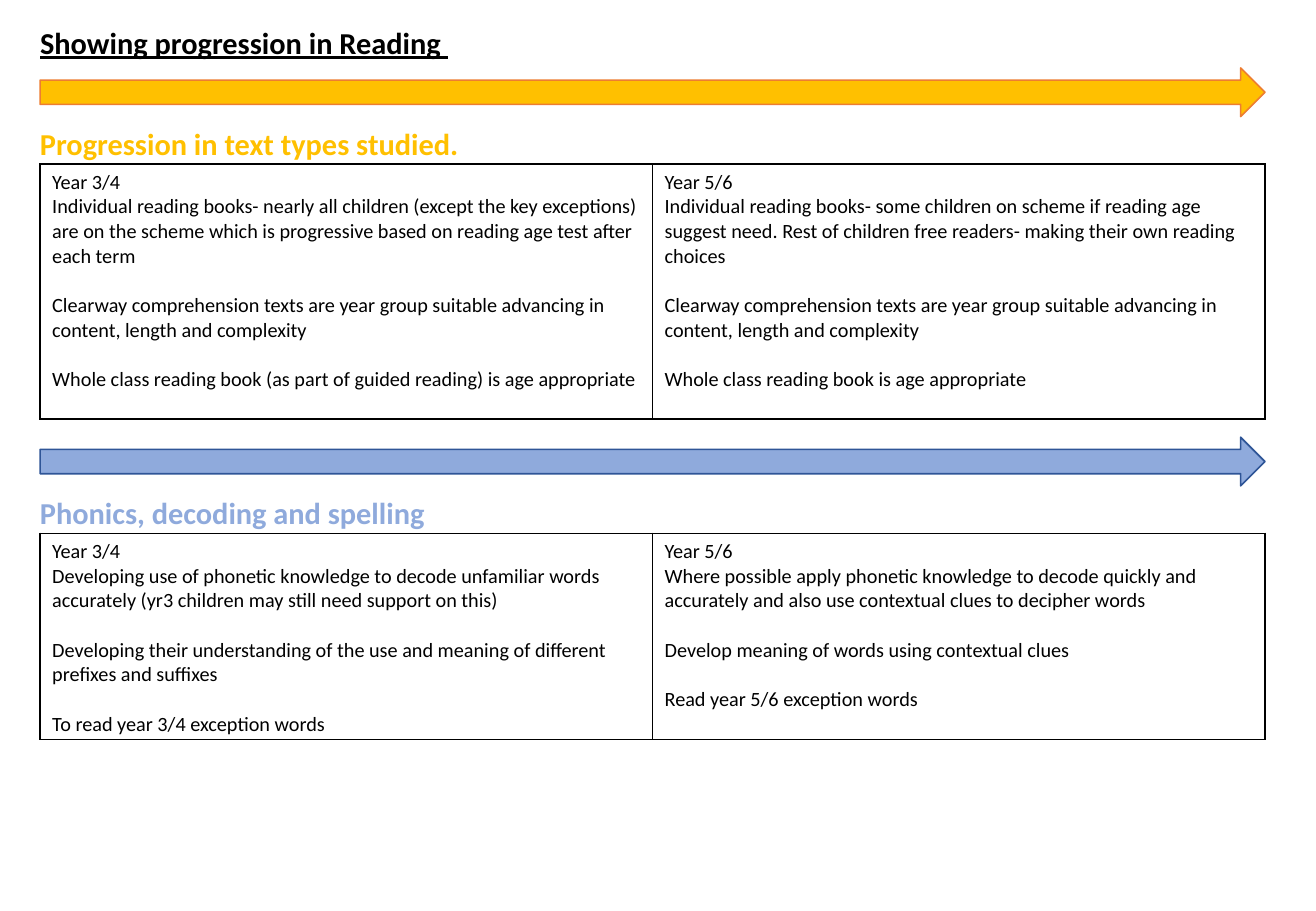
from lxml import etree
from pptx import Presentation, util as u
from pptx.dml.color import RGBColor
from pptx.enum import shapes, text
from pptx.oxml.ns import qn

LEFT, WIDTH = 0.33, 10.08
TEXT_LEFT = 0.23
BLACK, AMBER, BLUE = "000000", "FFC000", "8FAADC"
COMPREHENSION = ("Clearway comprehension texts are year group suitable advancing in "
                 "content, length and complexity")

# Each cell holds a year group and its blocks; blocks are set apart by a gap.
SECTIONS = [
    dict(top=0.56, height=2.1, color=AMBER, outline="ED7D31",
         heading="Progression in text types studied.",
         cells=[
             ("Year 3/4", [
                 "Individual reading books- nearly all children (except the key exceptions) "
                 "are on the scheme which is progressive based on reading age test after "
                 "each term",
                 COMPREHENSION,
                 "Whole class reading book (as part of guided reading) is age appropriate"]),
             ("Year 5/6", [
                 "Individual reading books- some children on scheme if reading age suggest "
                 "need. Rest of children free readers- making their own reading choices",
                 COMPREHENSION,
                 "Whole class reading book is age appropriate"])]),
    dict(top=3.6, height=1.7, color=BLUE, outline="2F5597",
         heading="Phonics, decoding and spelling",
         cells=[
             ("Year 3/4", [
                 "Developing use of phonetic knowledge to decode unfamiliar words "
                 "accurately (yr3 children may still need support on this)",
                 "Developing their understanding of the use and meaning of different "
                 "prefixes and suffixes",
                 "To read year 3/4 exception words"]),
             ("Year 5/6", [
                 "Where possible apply phonetic knowledge to decode quickly and accurately "
                 "and also use contextual clues to decipher words",
                 "Develop meaning of words using contextual clues",
                 "Read year 5/6 exception words"])]),
]


def rgb(color):
    return RGBColor.from_string(color)


class ProgressionSlide:
    font = "Calibri"
    heading_size, body_size = 18, 12
    block_gap = 14.65

    def __init__(self, presentation):
        self.slide = presentation.slides.add_slide(presentation.slide_layouts[5])

    def run(self, paragraph, wording, size, color=BLACK, bold=False, underline=False):
        run = paragraph.add_run()
        run.text = wording
        font = run.font
        font.name, font.size, font.bold = self.font, u.Pt(size), bold
        font.underline = underline
        font.color.rgb = rgb(color)

    def heading_text(self, shape, wording, color, underline=False):
        frame = shape.text_frame
        frame.word_wrap = True
        frame.auto_size = text.MSO_AUTO_SIZE.NONE
        frame.vertical_anchor = text.MSO_ANCHOR.TOP
        paragraph = frame.paragraphs[0]
        paragraph.alignment = text.PP_ALIGN.LEFT
        self.run(paragraph, wording, self.heading_size, color, True, underline)

    def title(self, wording):
        title = self.slide.shapes.title
        title.left, title.top = u.Inches(TEXT_LEFT), u.Inches(0.15)
        title.width, title.height = u.Inches(WIDTH), u.Inches(0.4)
        self.heading_text(title, wording, BLACK, underline=True)

    def heading(self, wording, top, color):
        box = self.slide.shapes.add_textbox(
            u.Inches(TEXT_LEFT), u.Inches(top), u.Inches(9.42), u.Inches(0.4))
        self.heading_text(box, wording, color)

    def arrow(self, top, color, outline):
        arrow = self.slide.shapes.add_shape(
            shapes.MSO_SHAPE.RIGHT_ARROW,
            u.Inches(LEFT), u.Inches(top), u.Inches(WIDTH), u.Inches(0.4))
        arrow.shadow.inherit = False
        arrow.fill.solid()
        arrow.fill.fore_color.rgb = rgb(color)
        arrow.line.color.rgb = rgb(outline)
        arrow.line.width = u.Pt(1)

    def borders(self, cell):
        properties = cell._tc.get_or_add_tcPr()
        for side in ("a:lnL", "a:lnR", "a:lnT", "a:lnB"):
            line = etree.SubElement(properties, qn(side), w=str(u.Pt(1)))
            fill = etree.SubElement(line, qn("a:solidFill"))
            etree.SubElement(fill, qn("a:srgbClr"), val=BLACK)

    def table(self, top, height, cells):
        table = self.slide.shapes.add_table(
            1, len(cells), u.Inches(LEFT), u.Inches(top),
            u.Inches(WIDTH), u.Inches(height)).table
        table.first_row = table.horz_banding = False
        for cell, (year, blocks) in zip(table.rows[0].cells, cells):
            self.borders(cell)
            cell.fill.background()
            cell.margin_bottom = u.Inches(0.02)
            frame = cell.text_frame
            self.run(frame.paragraphs[0], year, self.body_size)
            for index, block in enumerate(blocks):
                paragraph = frame.add_paragraph()
                paragraph.space_before = u.Pt(self.block_gap if index else 0)
                self.run(paragraph, block, self.body_size)

    def section(self, top, height, color, outline, heading, cells):
        """Stack an arrow, its heading and its table from the given top."""
        self.arrow(top, color, outline)
        self.heading(heading, top + 0.42, color)
        self.table(top + 0.79, height, cells)


def main():
    presentation = Presentation()
    presentation.slide_width = u.Inches(10.83)
    presentation.slide_height = u.Inches(7.5)
    slide = ProgressionSlide(presentation)
    slide.title("Showing progression in Reading ")
    for section in SECTIONS:
        slide.section(**section)
    presentation.save("out.pptx")


if __name__ == "__main__":
    main()
